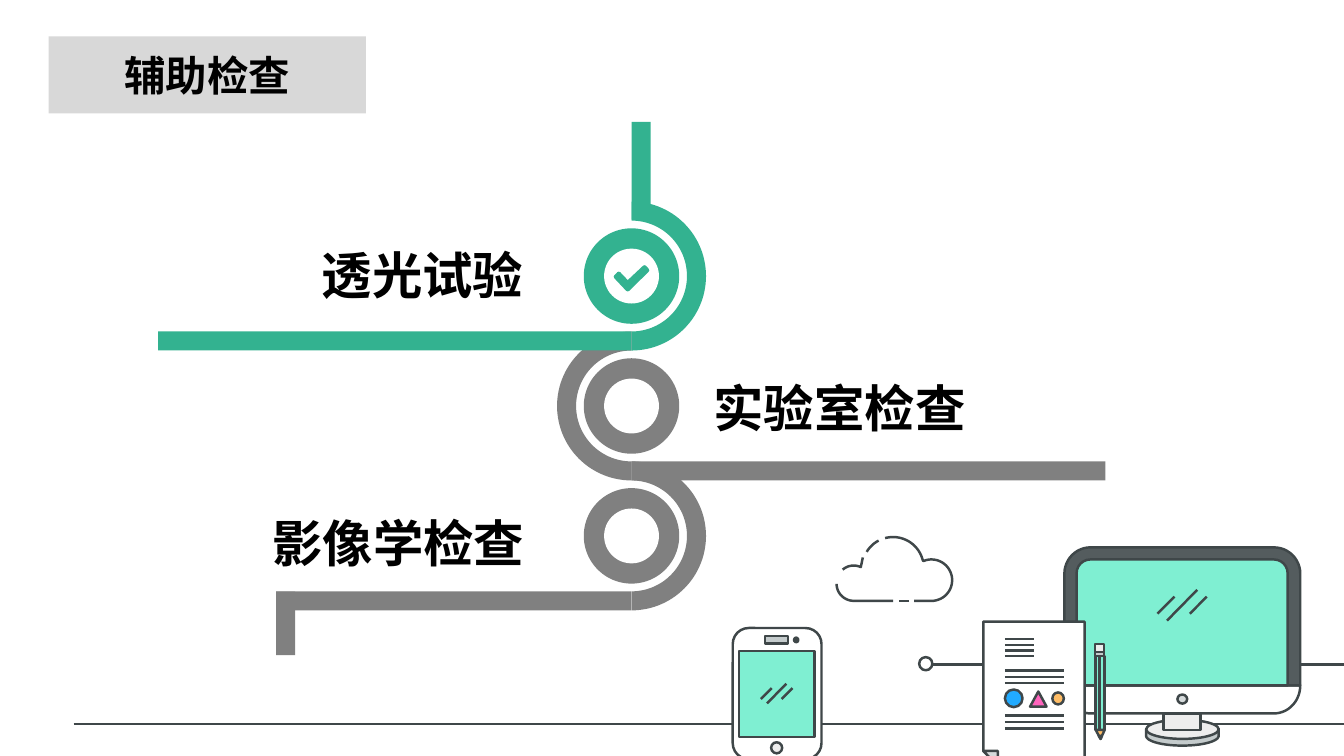
from dataclasses import dataclass
from math import cos, radians, sin
from typing import NamedTuple

from lxml import etree
from pptx import Presentation
from pptx.dml.color import RGBColor
from pptx.enum.shapes import MSO_CONNECTOR, MSO_SHAPE
from pptx.enum.text import MSO_ANCHOR, MSO_AUTO_SIZE, PP_ALIGN
from pptx.oxml.ns import qn
from pptx.util import Pt

STRAIGHT = MSO_CONNECTOR.STRAIGHT
RECT, OVAL, ROUNDED = MSO_SHAPE.RECTANGLE, MSO_SHAPE.OVAL, MSO_SHAPE.ROUNDED_RECTANGLE
ROUND_TOP, TRIANGLE = MSO_SHAPE.ROUND_2_SAME_RECTANGLE, MSO_SHAPE.ISOSCELES_TRIANGLE
LEFT, CENTER, RIGHT = PP_ALIGN.LEFT, PP_ALIGN.CENTER, PP_ALIGN.RIGHT
MIDDLE, NO_AUTOFIT = MSO_ANCHOR.MIDDLE, MSO_AUTO_SIZE.NONE

Point = tuple[float, float]


@dataclass(frozen=True)
class Theme:
    font: str = "Arial"
    title_size: float = 29.6
    label_size: float = 36
    outline_width: float = 1.75
    text: str = "000000"
    title_fill: str = "D8D8D8"
    active: str = "33B290"
    muted: str = "808080"
    white: str = "FFFFFF"
    ink: str = "3F4749"
    bezel: str = "545C5E"
    mint: str = "7FEFD2"
    pale: str = "EDEDED"
    silver: str = "D5DADB"
    steel: str = "C4CBCC"
    blue: str = "22ABFF"
    orange: str = "FFBD66"
    pink: str = "FF64BD"


THEME = Theme()


class Figure(NamedTuple):
    preset: int
    left: float
    top: float
    width: float
    height: float
    fill: str | None = None
    corner: float | None = None


class Outline(NamedTuple):
    points: list[Point]
    fill: str | None = None


class Stroke(NamedTuple):
    x1: float
    y1: float
    x2: float
    y2: float


class Step(NamedTuple):
    text: str
    color: str
    side: int  # 1: ring opens to the left, -1: to the right
    bar_end: float
    label_box: tuple[float, float, float, float]
    align: int


# Ring geometry of the winding path
AXIS, FIRST_CENTER = 451.1, 197.2
RING, BAND, DISC, ICON = 53.2, 13.6, 68.2, 39.2
PITCH = 2 * RING - BAND
CHECK = [(-11.2, 0.5), (-9.1, -1.7), (-2.7, 5), (9.3, -6.3), (11.2, -4.2), (-2.7, 9.5)]

STEPS = [
    Step("透光试验", THEME.active, 1, 113, (105.1, 170.6, 275.8, 90), RIGHT),
    Step("实验室检查", THEME.muted, -1, 789.6, (502.6, 265.7, 319.7, 108), LEFT),
    Step("影像学检查", THEME.muted, 1, 197.3, (149, 362.2, 232.6, 92.2), RIGHT),
]


def arc(x: float, y: float, rx: float, ry: float, start: float, end: float) -> list[Point]:
    """Points along an ellipse; angles in degrees, clockwise from the right."""
    count = max(8, int(abs(end - start) / 3))
    angles = [radians(start + (end - start) * i / count) for i in range(count + 1)]
    return [(x + rx * cos(a), y + ry * sin(a)) for a in angles]


def glare(x: float, y: float, scale: float) -> list[Stroke]:
    """Three slanted strokes of light on a screen."""
    strokes = [(-17.6, 6.1, -5.5, -6.1), (5.5, 6.1, 17.6, -6.1), (-10.8, 11, 10.8, -11)]
    return [Stroke(x + a * scale, y + b * scale, x + c * scale, y + d * scale)
            for a, b, c, d in strokes]


def text_lines(right: float, top: float, gap: float, count: int) -> list[Stroke]:
    return [Stroke(717.8, top + i * gap, right, top + i * gap) for i in range(count)]


GROUND = [Stroke(52.6, 517, 960, 517), Stroke(666, 474.5, 960, 474.5)]
MONITOR = [
    Outline([(870.5, 520.6), *arc(844.6, 525.6, 25.9, 7, 0, 180), (818.7, 520.6)], THEME.steel),
    Figure(OVAL, 818.7, 514.1, 51.8, 13.7, THEME.pale),
    Outline(arc(910, 489.6, 18.8, 20, 0, 90) + arc(779.1, 489.6, 18.8, 20, 90, 180), THEME.white),
    Figure(ROUND_TOP, 760.3, 391, 168.5, 98.6, THEME.bezel, 0.19),
    Figure(ROUND_TOP, 769, 399.6, 150.8, 90, THEME.mint, 0.11),
    Figure(OVAL, 841, 496.1, 7, 6.5, THEME.silver),
    *glare(844.4, 432.3, 1),
    Figure(RECT, 831, 509.8, 26.6, 11.5, THEME.pale),
]
CLOUD = [
    Outline(arc(637.9, 405.5, 21.9, 21.9, 255, 346)
            + arc(665.3, 414.4, 14.8, 14.8, 247, 450) + [(653, 429.2)]),
    Outline(arc(637.9, 405.5, 21.9, 21.9, 211, 242)),
    Outline(arc(609.8, 416, 12, 12, 229, 295) + [(616.3, 398.2)]),
    Outline([(637.9, 429.2), *arc(609.8, 417, 12.2, 12.2, 90, 180)]),
    Stroke(649.4, 429.2, 642.2, 429.2),
]
PHONE = [
    Figure(ROUNDED, 523.4, 448.6, 63.4, 93.6, THEME.white, 0.18),
    Figure(RECT, 527.8, 465.1, 54, 61.2, THEME.mint),
    Figure(OVAL, 550.8, 530.2, 7.9, 7.9, THEME.pale),
    Figure(OVAL, 567.2, 455.5, 3, 3.2, THEME.ink),
    Figure(RECT, 546.5, 454.3, 16.6, 5.3, THEME.steel),
    *glare(554.8, 495.4, 0.64),
]
PAPER = [
    Figure(OVAL, 656.6, 469.4, 9.4, 9.4),
    Outline([(774.7, 547.2), (712.8, 547.2), (702.4, 536.4), (702.4, 444), (774.7, 444)],
            THEME.white),
    Outline([(702.4, 536.4), (712.8, 547.2), (712.8, 536.4)], THEME.silver),
    *text_lines(738.7, 456.5, 4.05, 4),
    *text_lines(760.3, 478.8, 4.6, 3),
    *text_lines(760.3, 511.2, 4.6, 3),
    Figure(OVAL, 717.8, 492.5, 12.6, 12.6, THEME.blue),
    Figure(OVAL, 751.7, 494.6, 8.2, 8.6, THEME.orange),
    Figure(TRIANGLE, 735.8, 493.9, 11.8, 10.8, THEME.pink),
]
PENCIL = [
    Figure(RECT, 782.6, 468.7, 6.5, 52.6, THEME.mint),
    Outline([(789.1, 521.3), (786.2, 527.8), (782.6, 521.3)], THEME.orange),
    Outline([(787, 525.6), (784.8, 525.6), (786.2, 527.8)], THEME.ink),
    Stroke(785.5, 468.7, 785.5, 521.3),
    Figure(RECT, 782, 465.8, 6.5, 2.9, THEME.steel),
    Figure(RECT, 782, 460.1, 6.5, 5.7, THEME.pale),
]


def paint(shape, fill: str | None, line: str | None = None,
          width: float = THEME.outline_width) -> None:
    shape.shadow.inherit = False
    if fill:
        shape.fill.solid()
        shape.fill.fore_color.rgb = RGBColor.from_string(fill)
    else:
        shape.fill.background()
    if line:
        shape.line.color.rgb = RGBColor.from_string(line)
        shape.line.width = Pt(width)
    else:
        shape.line.fill.background()


def draw_figure(page, figure: Figure, line: str | None = None) -> None:
    shape = page.shapes.add_shape(figure.preset, *map(Pt, figure[1:5]))
    if figure.corner is not None:
        shape.adjustments[0] = figure.corner
    paint(shape, figure.fill, line)


def draw_outline(page, outline: Outline, line: str | None = None,
                 width: float = THEME.outline_width) -> None:
    """Filled outlines are closed; unfilled ones stay open."""
    first, *rest = [(Pt(x), Pt(y)) for x, y in outline.points]
    builder = page.shapes.build_freeform(*first)
    builder.add_line_segments(rest, close=outline.fill is not None)
    paint(builder.convert_to_shape(), outline.fill, line, width)


def draw_stroke(page, stroke: Stroke) -> None:
    line = page.shapes.add_connector(STRAIGHT, *map(Pt, stroke))
    line.line.color.rgb = RGBColor.from_string(THEME.ink)
    line.line.width = Pt(THEME.outline_width)
    etree.SubElement(line._element.spPr, qn("a:effectLst"))


def write(frame, text: str, *, size: float, align: int, wrap: bool = True) -> None:
    frame.auto_size = NO_AUTOFIT
    frame.word_wrap = wrap
    para = frame.paragraphs[0]
    para.alignment = align
    span = para.add_run()
    span.text = text
    span.font.name, span.font.size, span.font.bold = THEME.font, Pt(size), True
    span.font.color.rgb = RGBColor.from_string(THEME.text)


def add_title(page, text: str) -> None:
    title = page.shapes.title
    title.left, title.top, title.width, title.height = map(Pt, (34.7, 25.9, 226.6, 55.2))
    geometry = etree.SubElement(title._element.spPr, qn("a:prstGeom"), prst="roundRect")
    guides = etree.SubElement(geometry, qn("a:avLst"))
    etree.SubElement(guides, qn("a:gd"), name="adj", fmla="val 38200")
    paint(title, THEME.title_fill)
    title.text_frame.vertical_anchor = MIDDLE
    write(title.text_frame, text, size=THEME.title_size, align=CENTER, wrap=False)


def draw_illustration(page) -> None:
    for part in GROUND + MONITOR + CLOUD + PHONE + PAPER + PENCIL:
        if isinstance(part, Figure):
            draw_figure(page, part, THEME.ink)
        elif isinstance(part, Outline):
            draw_outline(page, part, THEME.ink)
        else:
            draw_stroke(page, part)


def draw_step(page, step: Step, y: float) -> None:
    turn = 90 * step.side
    half_ring = arc(AXIS, y, RING, RING, -turn, turn) + arc(
        AXIS, y, RING - BAND, RING - BAND, turn, -turn)
    if step.side < 0:
        half_ring = [(2 * AXIS - x, py) for x, py in arc(AXIS, y, RING, RING, -90, 90)
                     + arc(AXIS, y, RING - BAND, RING - BAND, 90, -90)]
    draw_outline(page, Outline(half_ring, step.color))
    draw_figure(page, Figure(RECT, min(AXIS, step.bar_end), y + RING - BAND,
                             abs(AXIS - step.bar_end), BAND, step.color))
    for size, color in ((DISC, step.color), (ICON, THEME.white)):
        draw_figure(page, Figure(OVAL, AXIS - size / 2, y - size / 2, size, size, color))
    label = page.shapes.add_textbox(*map(Pt, step.label_box))
    write(label.text_frame, step.text, size=THEME.label_size, align=step.align)


def main() -> None:
    deck = Presentation()
    deck.slide_width, deck.slide_height = Pt(960), Pt(540)
    page = deck.slides.add_slide(deck.slide_layouts[5])
    add_title(page, "辅助检查")
    draw_illustration(page)
    for index, step in reversed(list(enumerate(STEPS))):
        draw_step(page, step, FIRST_CENTER + index * PITCH)
    draw_figure(page, Figure(RECT, AXIS, 87.1, BAND, 69.9, THEME.active))
    draw_figure(page, Figure(RECT, STEPS[-1].bar_end, 422.7, BAND, 45.3, THEME.muted))
    check = [(AXIS + x, FIRST_CENTER + y) for x, y in CHECK]
    draw_outline(page, Outline(check, THEME.active), THEME.active, 3)
    deck.save("out.pptx")


if __name__ == "__main__":
    main()
